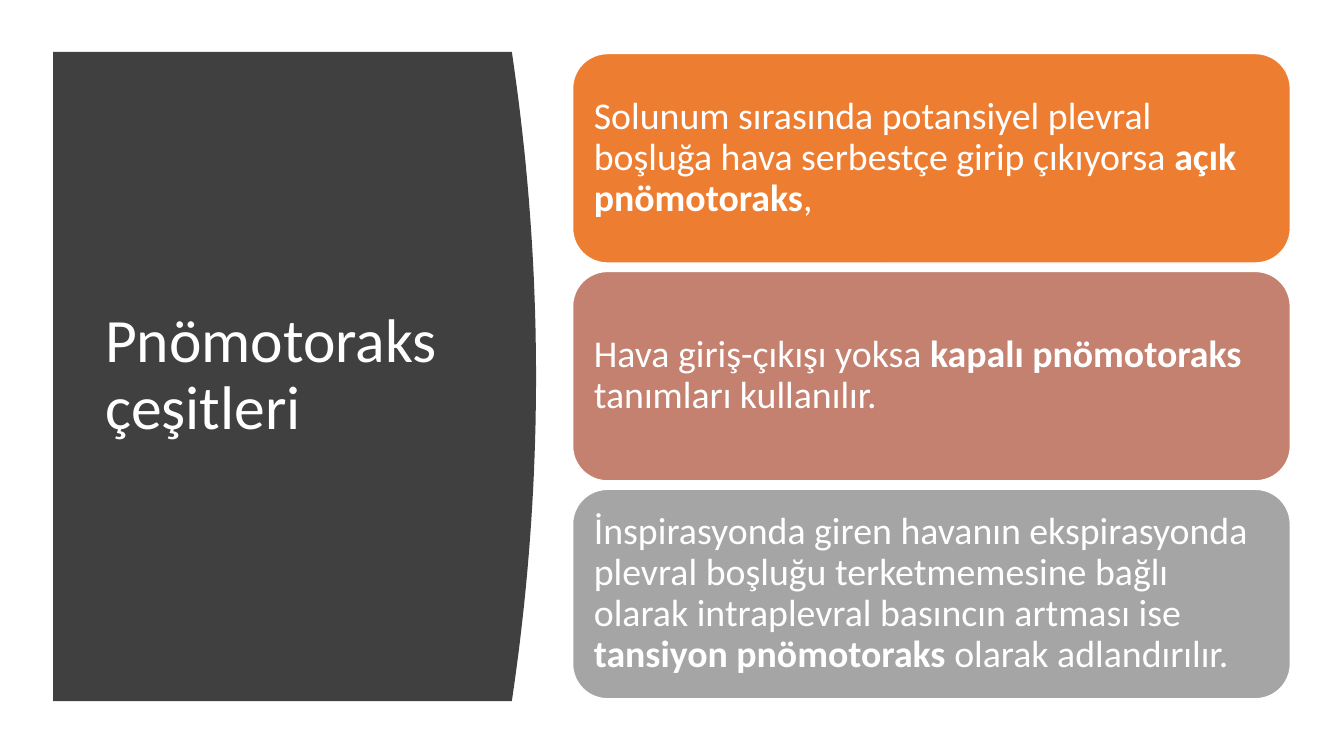
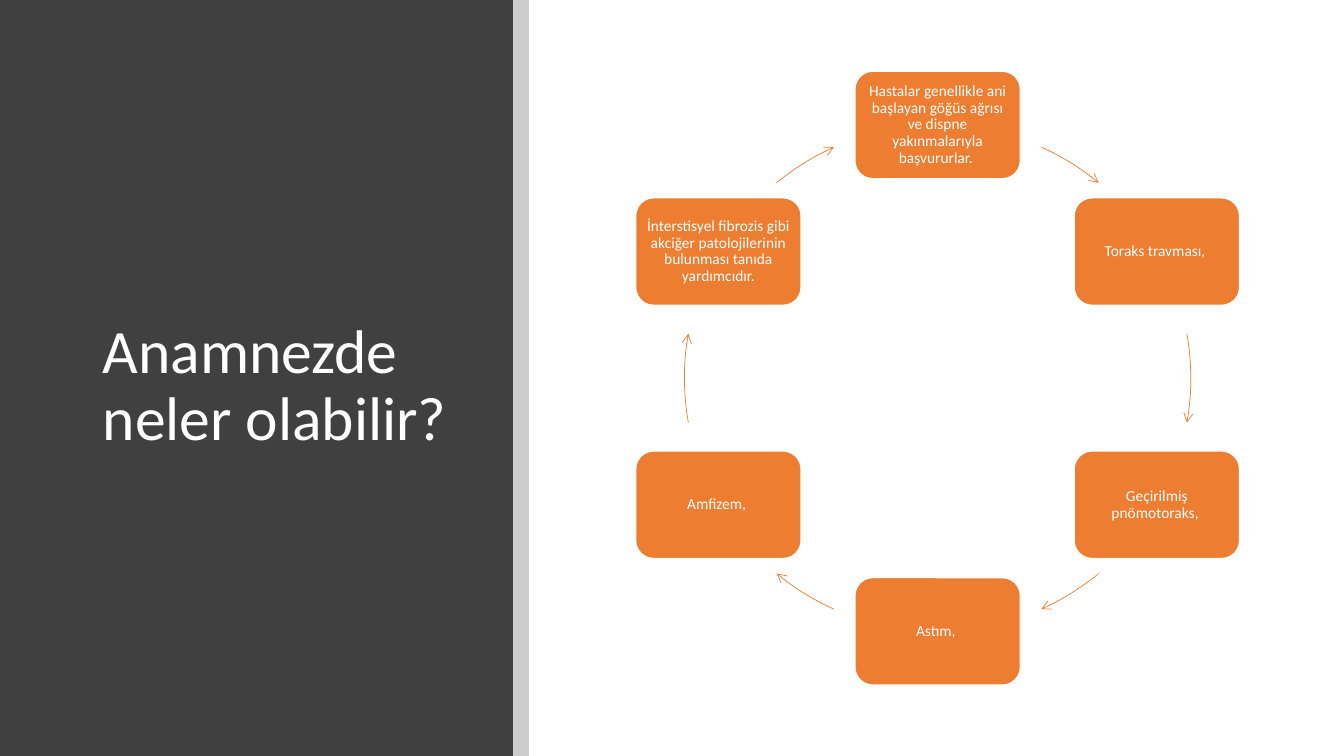
"""Build two slides on pneumothorax: its types, and a cycle of history findings."""
from math import cos, radians, sin

from lxml.etree import SubElement
from pptx import Presentation
from pptx.dml.color import RGBColor
from pptx.enum.shapes import MSO_SHAPE
from pptx.enum.text import MSO_ANCHOR, PP_ALIGN
from pptx.oxml.ns import qn
from pptx.util import Cm, Pt

DARK, WHITE, ORANGE = "404040", "FFFFFF", "ED7D31"
ROSE, GREY, PALE = "C48170", "A5A5A5", "CCCCCC"
FONT = "Calibri"


def paint(fill, colour):
    fill.solid()
    fill.fore_color.rgb = RGBColor.from_string(colour)


def write(box, *texts, size=44, align=PP_ALIGN.LEFT, inset=(0.25, 0.13), bold_at=None):
    frame = box.text_frame
    frame.word_wrap = True
    frame.vertical_anchor = MSO_ANCHOR.MIDDLE
    frame.margin_left = frame.margin_right = Cm(inset[0])
    frame.margin_top = frame.margin_bottom = Cm(inset[1])
    para = frame.paragraphs[0]
    para.alignment = align
    para.line_spacing = 0.9
    for position, text in enumerate(texts):
        span = para.add_run()
        span.text = text
        span.font.name = FONT
        span.font.size = Pt(size)
        span.font.bold = position == bold_at
        paint(span.font.fill, WHITE)


deck = Presentation()
deck.slide_width, deck.slide_height = Cm(33.87), Cm(19.05)
blank = deck.slide_layouts[6]

page = deck.slides.add_slide(blank)
panel_left, panel_top, panel_edge, bulge, half = 1.34, 1.31, 12.9, 0.61, 8.18
outline = page.shapes.build_freeform(Cm(panel_left), Cm(panel_top), scale=1.0)
edge = []
for step in range(41):
    offset = step / 20 - 1
    edge.append((Cm(panel_edge + bulge * (1 - offset ** 2)),
                 Cm(panel_top + half * (1 + offset))))
outline.add_line_segments(edge + [(Cm(panel_left), Cm(panel_top + 2 * half))])
panel = outline.convert_to_shape()
panel.shadow.inherit = False
paint(panel.fill, DARK)
panel.line.fill.background()
title = page.shapes.add_textbox(Cm(2.4), Cm(2.82), Cm(9.5), Cm(13.31))
write(title, "Pnömotoraks çeşitleri")

types = [
    (ORANGE, "Solunum sırasında potansiyel plevral boşluğa hava serbestçe girip çıkıyorsa ",
     "açık pnömotoraks", ","),
    (ROSE, "Hava giriş-çıkışı yoksa ", "kapalı pnömotoraks ", "tanımları kullanılır."),
    (GREY, "İnspirasyonda giren havanın ekspirasyonda plevral boşluğu terketmemesine "
     "bağlı olarak intraplevral basıncın artması ise ",
     "tansiyon pnömotoraks ", "olarak adlandırılır."),
]
for row, (colour, *texts) in enumerate(types):
    card = page.shapes.add_shape(MSO_SHAPE.ROUNDED_RECTANGLE, Cm(14.43),
                                 Cm(1.35 + 5.49 * row), Cm(18.09), Cm(5.28))
    card.shadow.inherit = False
    paint(card.fill, colour)
    paint(card.line.fill, WHITE)
    card.line.width = Pt(1)
    write(card, *texts, size=27, inset=(0.28, 0.28), bold_at=1)

page = deck.slides.add_slide(blank)
for left, width, colour in [(0, 12.93, DARK), (12.93, 0.4, PALE)]:
    band = page.shapes.add_shape(MSO_SHAPE.RECTANGLE, Cm(left), 0, Cm(width), deck.slide_height)
    band.shadow.inherit = False
    paint(band.fill, colour)
    band.line.fill.background()
title = page.shapes.add_textbox(Cm(2.34), Cm(2.25), Cm(9.27), Cm(15.01))
write(title, "Anamnezde neler olabilir?")

findings = [
    "Hastalar genellikle ani başlayan göğüs ağrısı ve dispne yakınmalarıyla başvururlar. ",
    "Toraks travması, ",
    "Geçirilmiş pnömotoraks, ",
    "Astım, ",
    "Amfizem, ",
    "İnterstisyel fibrozis gibi akciğer patolojilerinin bulunması tanıda yardımcıdır.",
]
arcs = [(24.2, 39.5), (79.9, 100.1), (140.5, 155.8)]
arcs += [(start + 180, end + 180) for start, end in arcs]
centre_x, centre_y, radius = 23.63, 9.53, 6.38
card_width, card_height = 4.17, 2.71
for place, (finding, turns) in enumerate(zip(findings, arcs)):
    angle = radians(place * 360 / len(findings))
    card = page.shapes.add_shape(
        MSO_SHAPE.ROUNDED_RECTANGLE,
        Cm(centre_x + radius * sin(angle) - card_width / 2),
        Cm(centre_y - radius * cos(angle) - card_height / 2),
        Cm(card_width), Cm(card_height))
    card.shadow.inherit = False
    paint(card.fill, ORANGE)
    paint(card.line.fill, WHITE)
    card.line.width = Pt(1)
    write(card, finding, size=11, align=PP_ALIGN.CENTER, inset=(0.13, 0.13))

    arrow = page.shapes.add_shape(MSO_SHAPE.ARC, Cm(centre_x - radius), Cm(centre_y - radius),
                                  Cm(2 * radius), Cm(2 * radius))
    for index, turn in enumerate(turns):
        arrow.adjustments[index] = (turn - 90) % 360 * 0.6
    arrow.shadow.inherit = False
    arrow.fill.background()
    paint(arrow.line.fill, ORANGE)
    arrow.line.width = Pt(0.5)
    SubElement(arrow.element.spPr.find(qn("a:ln")), qn("a:tailEnd"), type="arrow")

deck.save("out.pptx")
